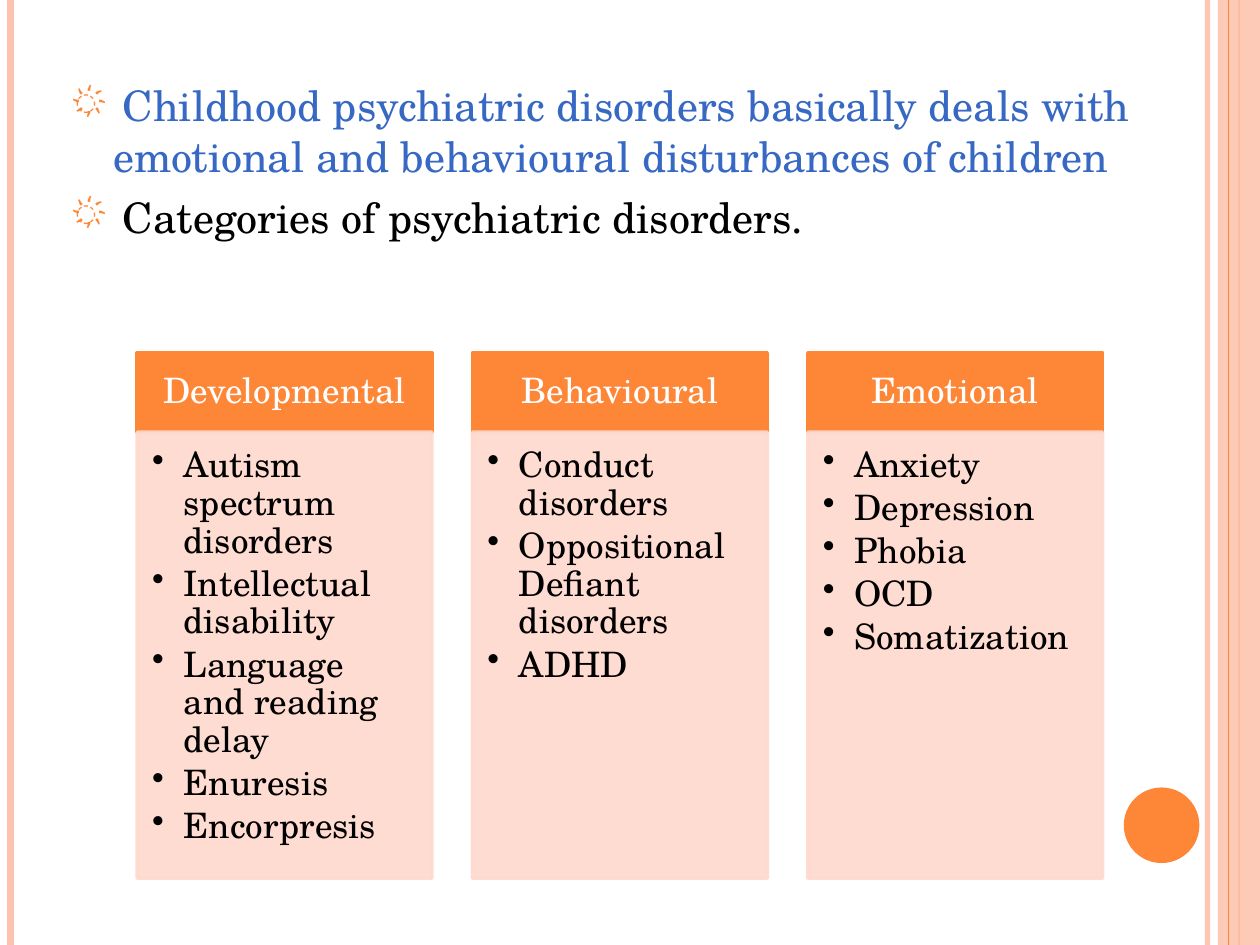
from lxml.etree import SubElement
from pptx import Presentation
from pptx.dml.color import RGBColor
from pptx.enum.shapes import MSO_CONNECTOR, MSO_SHAPE
from pptx.enum.text import MSO_ANCHOR, PP_ALIGN
from pptx.oxml.ns import qn
from pptx.util import Pt

FONT = "TeX Gyre Schola"
COLORS = {
    "orange": "FE8637",
    "peach": "FEC3AE",
    "pale": "FFD9CE",
    "blue": "3668C4",
    "black": "000000",
    "white": "FFFFFF",
}
PAGE_WIDTH, PAGE_HEIGHT = 720, 540
GAP = " "  # one em space between bullet and statement

STATEMENTS = [
    ("Childhood psychiatric disorders basically deals with emotional and "
     "behavioural disturbances of children", "blue"),
    ("Categories of psychiatric disorders.", "black"),
]
CATEGORIES = {
    "Developmental": ["Autism spectrum disorders", "Intellectual disability",
                      "Language and reading delay", "Enuresis", "Encorpresis"],
    "Behavioural": ["Conduct disorders", "Oppositional Defiant disorders", "ADHD"],
    "Emotional": ["Anxiety", "Depression", "Phobia", "OCD", "Somatization"],
}


def paint(color_format, color):
    color_format.rgb = RGBColor.from_string(COLORS[color])


def set_opacity(properties, percent):
    """Apply the opacity to every colour below a fill or line element."""
    for color in properties.iter(qn("a:srgbClr")):
        SubElement(color, qn("a:alpha"), val=str(percent * 1000))


def style_span(span, size, color):
    span.font.name = FONT
    span.font.size = Pt(size)
    paint(span.font.color, color)


def set_bullet(para, symbol, indent, color=None, percent=100):
    properties = para._p.get_or_add_pPr()
    properties.set("marL", str(Pt(indent)))
    properties.set("indent", str(-Pt(indent)))
    if color:
        holder = SubElement(properties, qn("a:buClr"))
        SubElement(holder, qn("a:srgbClr"), val=COLORS[color])
    SubElement(properties, qn("a:buSzPct"), val=str(percent * 1000))
    SubElement(properties, qn("a:buChar"), char=symbol)


def set_margins(frame, left, top, right, bottom):
    frame.word_wrap = True
    frame.margin_left, frame.margin_top = Pt(left), Pt(top)
    frame.margin_right, frame.margin_bottom = Pt(right), Pt(bottom)


def add_stripe(page, x, width, color, opacity=100):
    stripe = page.shapes.add_connector(
        MSO_CONNECTOR.STRAIGHT, Pt(x), Pt(0), Pt(x), Pt(PAGE_HEIGHT))
    stripe.line.width = Pt(width)
    paint(stripe.line.color, color)
    if opacity < 100:
        set_opacity(stripe._element.spPr, opacity)
    SubElement(stripe._element.spPr, qn("a:effectLst"))


def add_block(page, kind, left, top, width, height, color, opacity=100, border=0):
    block = page.shapes.add_shape(kind, Pt(left), Pt(top), Pt(width), Pt(height))
    block.shadow.inherit = False
    block.fill.solid()
    paint(block.fill.fore_color, color)
    if border:
        block.line.width = Pt(border)
        paint(block.line.color, color)
    else:
        block.line.fill.background()
    if opacity < 100:
        set_opacity(block._element.spPr, opacity)
    return block


def add_statements(page):
    box = page.shapes.add_textbox(Pt(36), Pt(42), Pt(648), Pt(441))
    frame = box.text_frame
    frame.word_wrap = True
    for number, (statement, color) in enumerate(STATEMENTS):
        para = frame.add_paragraph() if number else frame.paragraphs[0]
        para.space_before = Pt(6)
        set_bullet(para, "҉", 21.6, "orange", 70)
        for words, size in ((GAP, 20), (statement, 24)):
            span = para.add_run()
            span.text = words
            style_span(span, size, color)


def add_category(page, left, title, disorders):
    width, top, head_height, body_height = 168.5, 201.6, 45.4, 254.9

    # Heading
    head = add_block(page, MSO_SHAPE.RECTANGLE, left, top, width, head_height,
                     "orange", border=2)
    frame = head.text_frame
    set_margins(frame, 11.5, 6.5, 11.5, 6.5)
    frame.vertical_anchor = MSO_ANCHOR.MIDDLE
    frame.text = title
    para = frame.paragraphs[0]
    para.alignment = PP_ALIGN.CENTER
    para.line_spacing = 0.9
    style_span(para.runs[0], 20, "white")

    # Bulleted disorders
    body = add_block(page, MSO_SHAPE.RECTANGLE, left, top + head_height, width,
                     body_height, "pale", opacity=90, border=2)
    frame = body.text_frame
    set_margins(frame, 8.6, 8.6, 11.5, 12.2)
    frame.vertical_anchor = MSO_ANCHOR.TOP
    frame.text = "\n".join(disorders)
    for para in frame.paragraphs:
        para.level = 1
        para.alignment = PP_ALIGN.LEFT
        para.line_spacing = 0.9
        para.space_after = Pt(3)
        set_bullet(para, "•", 18)
        style_span(para.runs[0], 20, "black")


def main():
    deck = Presentation()
    deck.slide_width, deck.slide_height = Pt(PAGE_WIDTH), Pt(PAGE_HEIGHT)
    page = deck.slides.add_slide(deck.slide_layouts[6])

    # Edge decoration
    add_stripe(page, 690, 3, "peach", 93)
    add_stripe(page, 6, 4.5, "peach")
    add_stripe(page, 708, 1.5, "orange")
    add_block(page, MSO_SHAPE.RECTANGLE, 696, 0, 24, PAGE_HEIGHT, "peach", opacity=87)
    add_stripe(page, 702, 0.75, "orange")
    add_block(page, MSO_SHAPE.OVAL, 642.2, 450, 43.2, 43.2, "orange")

    # Statements and category columns
    add_statements(page)
    for column, (title, disorders) in enumerate(CATEGORIES.items()):
        add_category(page, 78.4 + column * 191.6, title, disorders)

    deck.save("out.pptx")


if __name__ == "__main__":
    main()
